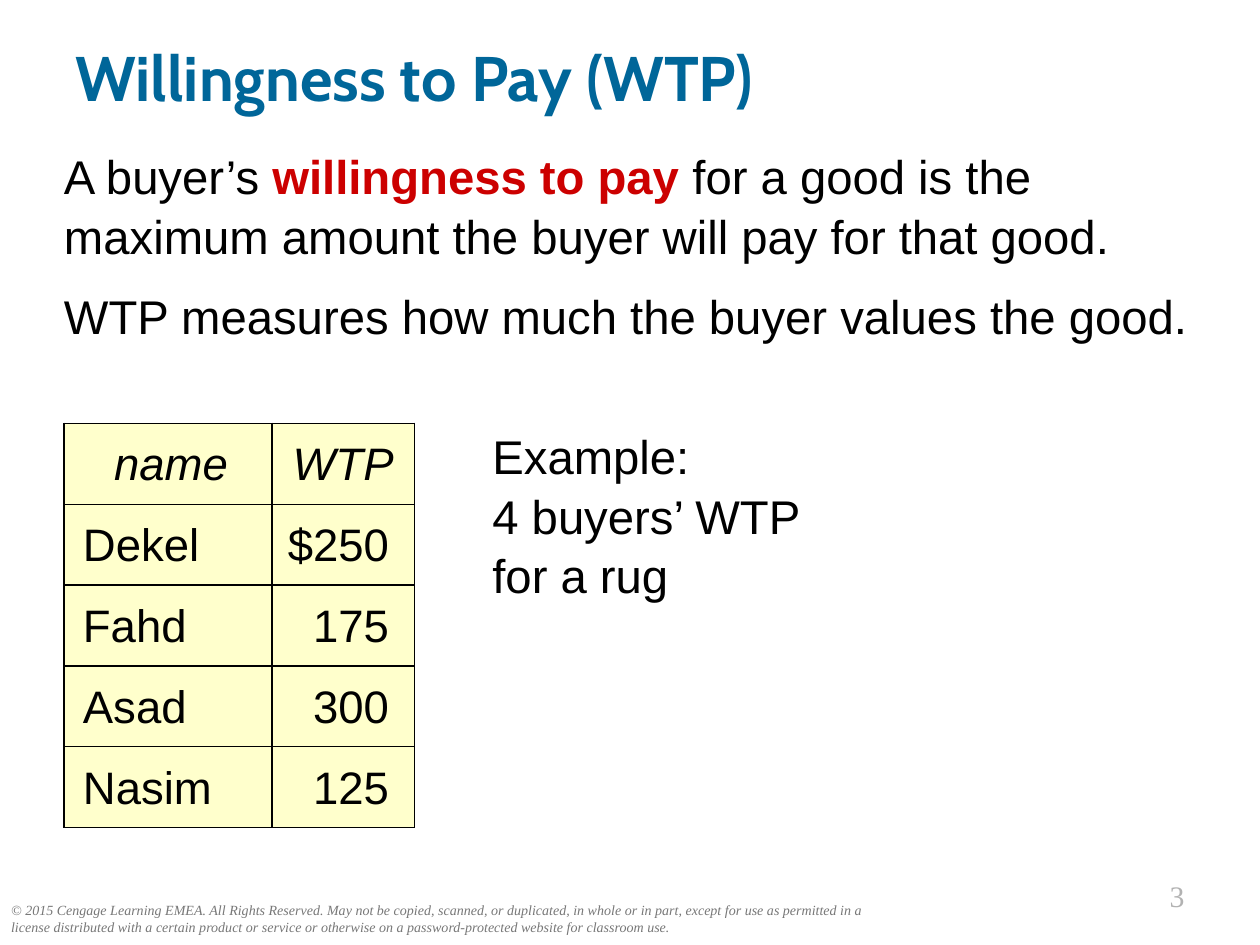
from dataclasses import dataclass

from lxml import etree
from pptx import Presentation
from pptx.dml.color import RGBColor
from pptx.enum.text import MSO_ANCHOR as Anchor, PP_ALIGN as Align
from pptx.oxml.ns import qn
from pptx.util import Pt


@dataclass(frozen=True)
class Theme:
    ink: str = "000000"
    blue: str = "006699"
    red: str = "CC0000"
    cream: str = "FFFFCC"
    gray: str = "777777"
    pale: str = "B2B2B2"
    sans: str = "Arial"
    head: str = "Cabin"
    serif: str = "Times New Roman"
    title: float = 36
    body: float = 27
    cell: float = 26
    page: float = 17
    note: float = 8


THEME = Theme()


def write(frame, paras, size=THEME.body, font=THEME.sans, color=THEME.ink,
          bold=False, italic=False, align=Align.LEFT, line=None, gap=0):
    for i, para in enumerate(paras):
        p = frame.add_paragraph() if i else frame.paragraphs[0]
        p.alignment = align
        p.space_before = Pt(gap if i else 0)
        if line:
            p.line_spacing = line
        for words, style in [(para, {})] if isinstance(para, str) else para:
            for j, part in enumerate(words.split("\n")):
                if j:
                    p.add_line_break()
                run = p.add_run()
                run.text = part
                run.font.name = font
                run.font.size = Pt(size)
                run.font.bold = style.get("bold", bold)
                run.font.italic = italic
                run.font.color.rgb = RGBColor.from_string(
                    style.get("color", color))


def add_text(slide, box, paras, anchor=Anchor.TOP, **style):
    frame = slide.shapes.add_textbox(*map(Pt, box)).text_frame
    frame.word_wrap = True
    frame.vertical_anchor = anchor
    write(frame, paras, **style)


def add_title(slide, box):
    add_text(slide, box, ["Willingness to Pay (WTP)"], Anchor.MIDDLE,
             size=THEME.title, font=THEME.head, color=THEME.blue, bold=True)


def add_body(slide, box):
    term = ("willingness to pay", {"color": THEME.red, "bold": True})
    add_text(slide, box, [
        [("A buyer’s ", {}), term,
         (" for a good is the maximum amount the buyer will pay "
          "for that good.", {})],
        "WTP measures how much the buyer values the good.",
    ], line=1.05, gap=12)


def add_edges(cell):
    props = cell._tc.get_or_add_tcPr()
    for side in ("lnL", "lnR", "lnT", "lnB"):
        edge = etree.SubElement(props, qn(f"a:{side}"), w=str(Pt(1)))
        fill = etree.SubElement(edge, qn("a:solidFill"))
        etree.SubElement(fill, qn("a:srgbClr"), val=THEME.ink)


def add_prices(slide, box):
    rows = [("name", "WTP"), ("Dekel", "$250"), ("Fahd", "175"),
            ("Asad", "300"), ("Nasim", "125")]
    table = slide.shapes.add_table(len(rows), 2, *map(Pt, box)).table
    table.first_row = table.horz_banding = False
    wide = 118.8
    table.columns[0].width = Pt(wide)
    table.columns[1].width = Pt(box[2] - wide)
    for r, row in enumerate(rows):
        table.rows[r].height = Pt(box[3] / len(rows))
        for c, words in enumerate(row):
            cell = table.cell(r, c)
            add_edges(cell)
            cell.fill.solid()
            cell.fill.fore_color.rgb = RGBColor.from_string(THEME.cream)
            cell.vertical_anchor = Anchor.MIDDLE
            cell.margin_left = Pt(7.2 if c else 10.8)
            cell.margin_right = Pt(14.4 if r and c else 7.2)
            align = (Align.LEFT, Align.RIGHT)[c] if r else Align.CENTER
            write(cell.text_frame, [words], size=THEME.cell,
                  italic=r == 0, align=align, line=1.05)


def add_case(slide, box):
    add_text(slide, box, ["Example:\n4 buyers’ WTP\nfor a rug"], line=1.05)


def add_foot(slide, box):
    left, top, width, height = box
    add_text(slide, (left, top + 13.7, 522.7, height - 13.7), [
        "© 2015 Cengage Learning EMEA. All Rights Reserved. May not be "
        "copied, scanned, or duplicated, in whole or in part, except for use "
        "as permitted in a license distributed with a certain product or "
        "service or otherwise on a password-protected website for classroom "
        "use."], size=THEME.note, font=THEME.serif, color=THEME.gray,
        italic=True)
    add_text(slide, (left + width - 90, top, 90, 28), ["3"],
             size=THEME.page, font=THEME.serif, color=THEME.pale,
             align=Align.RIGHT)


def main():
    deck = Presentation()
    deck.slide_width, deck.slide_height = Pt(720), Pt(540)
    slide = deck.slides.add_slide(deck.slide_layouts[6])
    add_foot(slide, (-0.7, 498.2, 684.7, 40.3))
    add_title(slide, (36, 18, 648, 51))
    add_body(slide, (29.5, 79.2, 659, 152))
    add_prices(slide, (36.6, 242, 200.2, 231))
    add_case(slide, (274.3, 239, 223.2, 109.4))
    deck.save("out.pptx")


if __name__ == "__main__":
    main()
